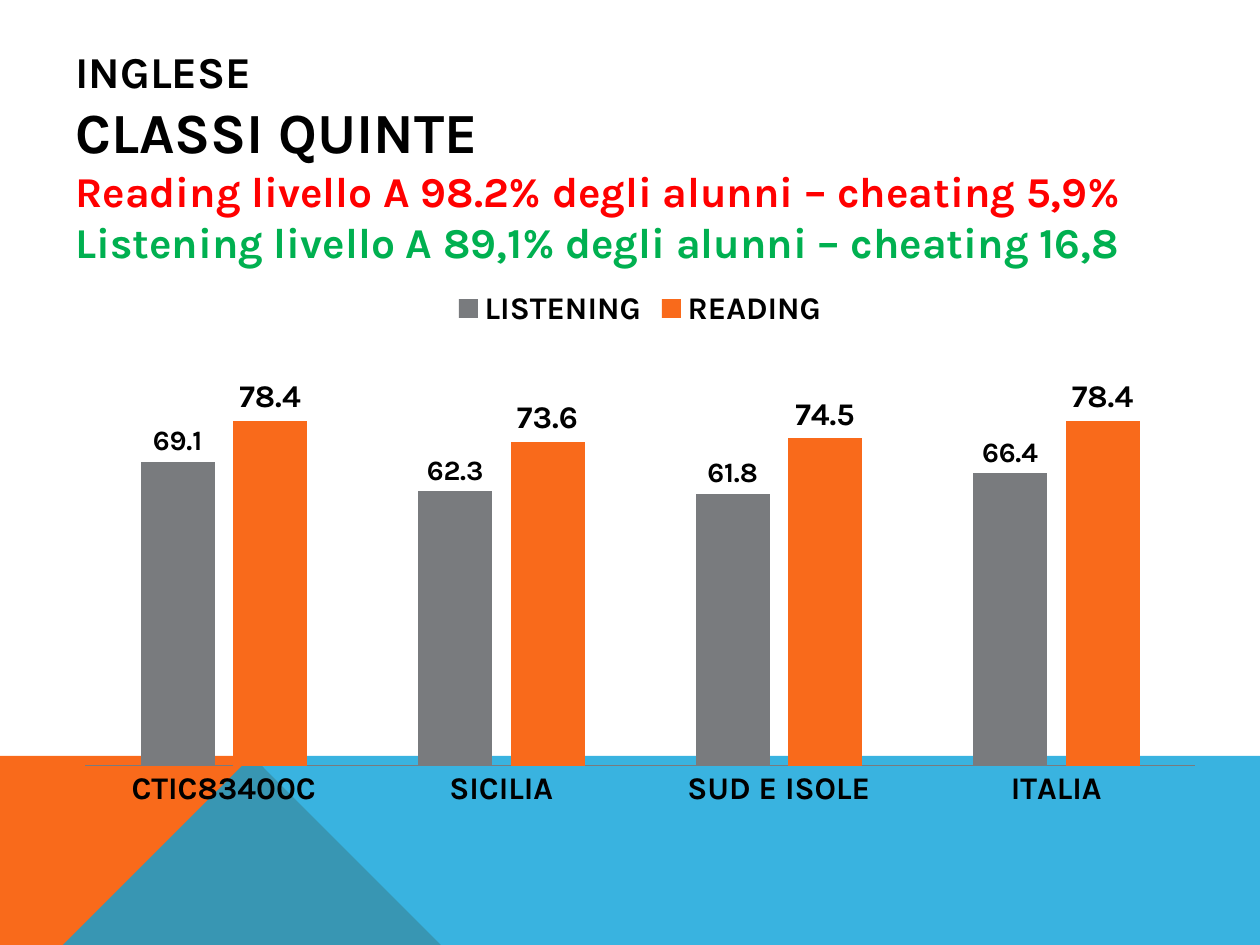
from typing import NamedTuple

from lxml import etree
from pptx import Presentation
from pptx import util as u
from pptx.chart.data import CategoryChartData
from pptx.dml.color import RGBColor
from pptx.enum import chart as ch, text
from pptx.oxml.ns import qn

W, H = 10, 7.5
BAND_TOP, PEAK_X, FOOT_X = 5.52, 2.23, 3.91
FONT = "Karla"
BLACK = RGBColor(0, 0, 0)
RED = RGBColor(0xFF, 0, 0)
GREEN = RGBColor(0, 0xB0, 0x50)
ORANGE = RGBColor(0xF9, 0x6A, 0x1B)
BLUE = RGBColor(0x08, 0xA1, 0xD9)
GREY = RGBColor(0x79, 0x7B, 0x7E)


class Line(NamedTuple):
    text: str
    size: float
    color: RGBColor


class Series(NamedTuple):
    name: str
    values: tuple
    color: RGBColor
    label_size: float


class Band(NamedTuple):
    points: list
    color: RGBColor
    opacity: int


BANDS = [
    Band([(0, H), (0, BAND_TOP), (PEAK_X, BAND_TOP), (FOOT_X, H)], ORANGE, 100),
    Band([(0, H), (PEAK_X, BAND_TOP), (W, BAND_TOP), (W, H)], BLUE, 80),
]
TITLE = [
    Line("INGLESE", 25.2, BLACK),
    Line("CLASSI QUINTE", 32.4, BLACK),
    Line("Reading livello A 98.2% degli alunni – cheating 5,9%", 24.3, RED),
    Line("Listening livello A 89,1% degli alunni – cheating 16,8", 24.3, GREEN),
]
CATEGORIES = ["CTIC83400C", "SICILIA", "SUD E ISOLE", "ITALIA"]
SERIES = [
    Series("LISTENING", (69.1, 62.3, 61.8, 66.4), GREY, 16),
    Series("READING", (78.4, 73.6, 74.5, 78.4), ORANGE, 18),
]


def set_all(obj, **values) -> None:
    for name, value in values.items():
        setattr(obj, name, value)


def set_font(font, size: float, color: RGBColor = BLACK) -> None:
    set_all(font, name=FONT, size=u.Pt(size), bold=True)
    font.color.rgb = color


def box(*lengths: float) -> list:
    return [u.Inches(v) for v in lengths]


def draw_band(s, band: Band) -> None:
    start, *rest = band.points
    fb = s.shapes.build_freeform(*start, scale=u.Inches(1))
    fb.add_line_segments(rest, close=True)
    sp = fb.convert_to_shape()
    sp.shadow.inherit = False
    sp.line.fill.background()
    sp.fill.solid()
    sp.fill.fore_color.rgb = band.color
    if band.opacity < 100:
        clr = sp.fill._xPr.find(".//" + qn("a:srgbClr"))
        etree.SubElement(clr, qn("a:alpha"), val=str(band.opacity * 1000))


def draw_title(s, lines: list) -> None:
    tf = s.shapes.add_textbox(*box(0.5, 0.37, 9, 1.73)).text_frame
    set_all(tf, word_wrap=True, vertical_anchor=text.MSO_ANCHOR.MIDDLE)
    p = tf.paragraphs[0]
    for i, line in enumerate(lines):
        if i:
            p.add_line_break()
        r = p.add_run()
        r.text = line.text
        set_font(r.font, line.size, line.color)


def set_plot_area(chart, **shares: float) -> None:
    """Fix the inner plot area as shares of the chart's size."""
    area = chart._chartSpace.chart.plotArea
    for old in area.findall(qn("c:layout")):
        area.remove(old)
    layout = etree.Element(qn("c:layout"))
    area.insert(0, layout)
    manual = etree.SubElement(layout, qn("c:manualLayout"))
    values = dict(layoutTarget="inner", xMode="edge", yMode="edge", **shares)
    for name, value in values.items():
        etree.SubElement(manual, qn("c:" + name), val=str(value))


def draw_chart(s, categories: list, series: list) -> None:
    data = CategoryChartData(number_format="0.0")
    data.categories = categories
    for item in series:
        data.add_series(item.name, item.values)
    chart = s.shapes.add_chart(ch.XL_CHART_TYPE.COLUMN_CLUSTERED,
                               *box(0.67, 2.18, 8.82, 4.57), data).chart
    set_font(chart.font, 18)
    set_all(chart, has_title=False, has_legend=True)
    set_all(chart.legend, position=ch.XL_LEGEND_POSITION.TOP, include_in_layout=False)
    set_font(chart.legend.font, 18)

    set_all(chart.value_axis, visible=False, has_major_gridlines=False,
            minimum_scale=0, maximum_scale=90)
    axis = chart.category_axis
    set_all(axis, major_tick_mark=ch.XL_TICK_MARK.NONE,
            minor_tick_mark=ch.XL_TICK_MARK.NONE)
    axis.format.line.color.rgb = GREY
    set_font(axis.tick_labels.font, 18)

    plot = chart.plots[0]
    set_all(plot, overlap=-25, gap_width=150, vary_by_categories=False)
    for item, bars in zip(series, plot.series):
        bars.format.fill.solid()
        bars.format.fill.fore_color.rgb = item.color
        set_all(bars.data_labels, show_value=True,
                position=ch.XL_LABEL_POSITION.OUTSIDE_END)
        set_font(bars.data_labels.font, item.label_size)
    set_plot_area(chart, x=0, y=0.165, w=1, h=0.688)


def main() -> None:
    prs = Presentation()
    set_all(prs, slide_width=u.Inches(W), slide_height=u.Inches(H))
    s = prs.slides.add_slide(prs.slide_layouts[6])
    for band in BANDS:
        draw_band(s, band)
    draw_title(s, TITLE)
    draw_chart(s, CATEGORIES, SERIES)
    prs.save("out.pptx")


if __name__ == "__main__":
    main()
